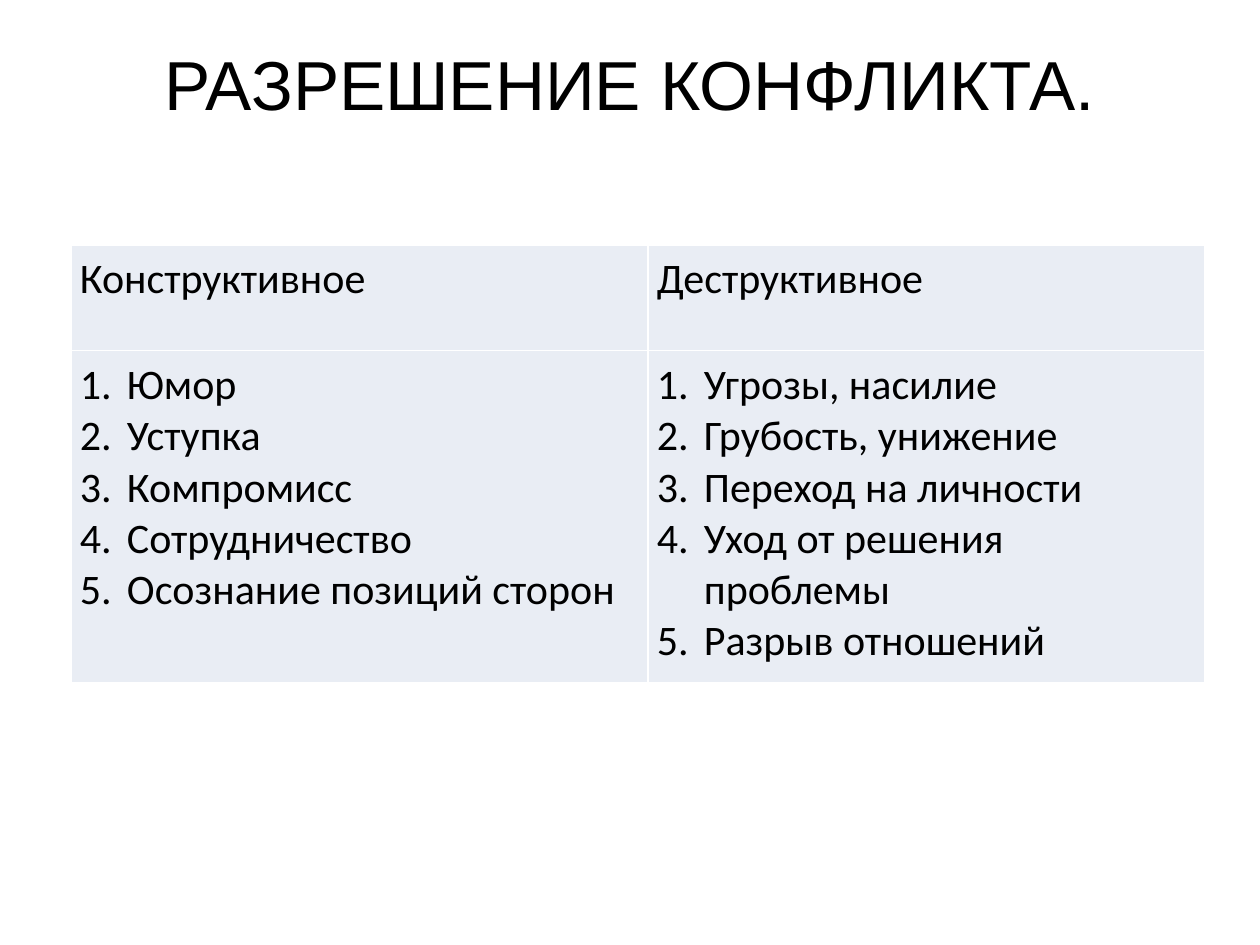
from dataclasses import dataclass

from lxml import etree
from pptx import Presentation
from pptx.dml.color import RGBColor
from pptx.enum.text import MSO_ANCHOR, PP_ALIGN
from pptx.oxml.ns import qn
from pptx.util import Cm, Pt

TOP = MSO_ANCHOR.TOP
CENTER = PP_ALIGN.CENTER
LEFT = PP_ALIGN.LEFT
TITLE_ONLY = 5


@dataclass(frozen=True)
class Theme:
    title_font: str = "Arial"
    body_font: str = "Calibri"
    title_size: float = 39.6
    body_size: float = 24
    text: str = "000000"
    cell: str = "E9EDF4"
    border: str = "FFFFFF"
    border_width: float = 1


class SlideBuilder:
    def __init__(self, prs, theme):
        self.theme = theme
        self.s = prs.slides.add_slide(prs.slide_layouts[TITLE_ONLY])

    def add_run(self, p, text, font, size):
        r = p.add_run()
        r.text = text
        r.font.name = font
        r.font.size = Pt(size)
        r.font.bold = False
        r.font.color.rgb = RGBColor.from_string(self.theme.text)

    def title(self, text, left, top, width, height):
        sp = self.s.shapes.title
        sp.left, sp.top, sp.width, sp.height = map(Cm, (left, top, width, height))
        tf = sp.text_frame
        tf.word_wrap = True
        tf.vertical_anchor = TOP
        tf.margin_top = Cm(0.07)
        p = tf.paragraphs[0]
        p.alignment = CENTER
        self.add_run(p, text, self.theme.title_font, self.theme.title_size)

    def number(self, p):
        """Give the paragraph an automatic number and a hanging indent."""
        pPr = p._p.get_or_add_pPr()
        indent = Cm(0.95)
        pPr.set("marL", str(indent))
        pPr.set("indent", str(-indent))
        etree.SubElement(pPr, qn("a:buAutoNum"), type="arabicPeriod")

    def borders(self, cell):
        tcPr = cell._tc.get_or_add_tcPr()
        for side in ("lnL", "lnR", "lnT", "lnB"):
            ln = etree.SubElement(tcPr, qn(f"a:{side}"), w=str(Pt(self.theme.border_width)))
            fill = etree.SubElement(ln, qn("a:solidFill"))
            etree.SubElement(fill, qn("a:srgbClr"), val=self.theme.border)

    def fill_cell(self, cell, lines, numbered):
        self.borders(cell)
        cell.fill.solid()
        cell.fill.fore_color.rgb = RGBColor.from_string(self.theme.cell)
        cell.margin_left = cell.margin_right = Cm(0.18)
        cell.margin_top = cell.margin_bottom = Cm(0.18)
        tf = cell.text_frame
        for i, line in enumerate(lines):
            p = tf.add_paragraph() if i else tf.paragraphs[0]
            p.alignment = LEFT
            if numbered:
                self.number(p)
            self.add_run(p, line, self.theme.body_font, self.theme.body_size)

    def comparison(self, columns, left, top, widths, heights):
        """Draw a table of headings, each above its numbered list."""
        frame = self.s.shapes.add_table(
            len(heights), len(columns), Cm(left), Cm(top), Cm(sum(widths)), Cm(sum(heights)))
        table = frame.table
        table.first_row = table.horz_banding = False
        for row, height in zip(table.rows, heights):
            row.height = Cm(height)
        for c, (heading, items) in enumerate(columns.items()):
            table.columns[c].width = Cm(widths[c])
            self.fill_cell(table.cell(0, c), [heading], numbered=False)
            self.fill_cell(table.cell(1, c), items, numbered=True)


RESOLUTIONS = {
    "Конструктивное": [
        "Юмор",
        "Уступка",
        "Компромисс",
        "Сотрудничество",
        "Осознание позиций сторон",
    ],
    "Деструктивное": [
        "Угрозы, насилие",
        "Грубость, унижение",
        "Переход на личности",
        "Уход от решения проблемы",
        "Разрыв отношений",
    ],
}


def main():
    prs = Presentation()
    prs.slide_width, prs.slide_height = Cm(25.4), Cm(19.05)
    slide = SlideBuilder(prs, Theme())
    slide.title("РАЗРЕШЕНИЕ КОНФЛИКТА.", 1.27, 0.76, 22.86, 3.18)
    slide.comparison(RESOLUTIONS, 1.43, 4.94, widths=(11.63, 11.23), heights=(2.13, 6.7))
    prs.save("out.pptx")


if __name__ == "__main__":
    main()
